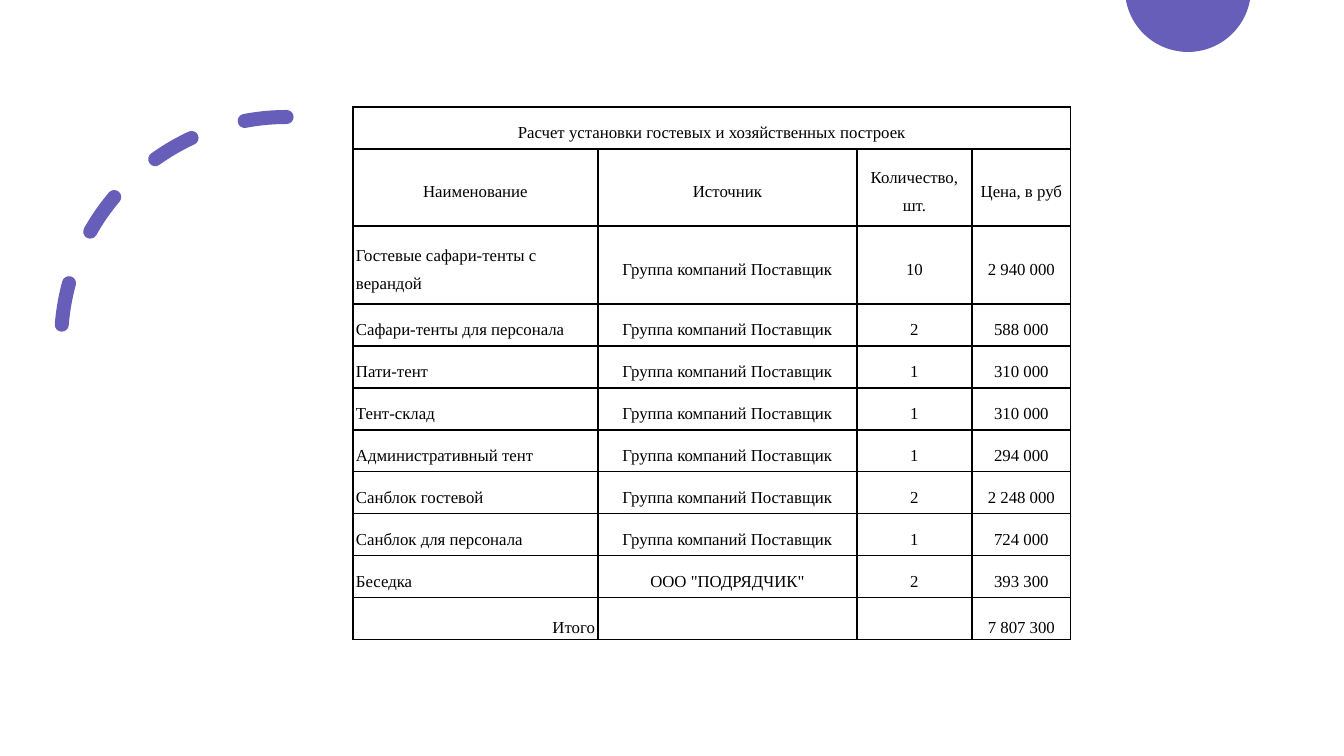
import math
from lxml import etree
from pptx import Presentation, util as u
from pptx.dml.color import RGBColor
from pptx.enum import dml, shapes, text
from pptx.oxml.ns import qn

SCALE = 914400 / 100.8
HUES = {"accent": "665EB8", "ink": "000000"}
LEFT, MID, RIGHT = text.PP_ALIGN.LEFT, text.PP_ALIGN.CENTER, text.PP_ALIGN.RIGHT
COLS = [245, 259, 115, 99]
ROWS = [42, 77, 78] + [42] * 8
TITLE = "Расчет установки гостевых и хозяйственных построек"
HEADS = ["Наименование", "Источник", "Количество, шт.", "Цена, в руб"]
CAMP = "Группа компаний Поставщик"
ITEMS = [
    ["Гостевые сафари-тенты с верандой", CAMP, "10", "2 940 000"],
    ["Сафари-тенты для персонала", CAMP, "2", "588 000"],
    ["Пати-тент", CAMP, "1", "310 000"],
    ["Тент-склад", CAMP, "1", "310 000"],
    ["Административный тент", CAMP, "1", "294 000"],
    ["Санблок гостевой", CAMP, "2", "2 248 000"],
    ["Санблок для персонала", CAMP, "1", "724 000"],
    ["Беседка", 'ООО "ПОДРЯДЧИК"', "2", "393 300"],
]
TOTAL = ["Итого", "", "", "7 807 300"]


def px(n):
    return u.Emu(round(n * SCALE))


def hue(name):
    return RGBColor.from_string(HUES[name])


def write(frame, words, size=12, font="Times New Roman", color="ink", align=MID, space=1.5):
    para = frame.paragraphs[0]
    para.alignment = align
    para.line_spacing = space
    para.font.size = u.Pt(size)
    if words:
        run = para.add_run()
        run.text = words
        run.font.size = u.Pt(size)
        run.font.name = font
        run.font.color.rgb = hue(color)


def edge(cell, color="ink", width=1):
    props = cell._tc.get_or_add_tcPr()
    for spot, side in enumerate(("lnL", "lnR", "lnT", "lnB")):
        line = etree.Element(qn(f"a:{side}"), w=str(u.Pt(width)))
        fill = etree.SubElement(line, qn("a:solidFill"))
        etree.SubElement(fill, qn("a:srgbClr"), val=HUES[color])
        props.insert(spot, line)


def add_disc(slide, x, y, radius):
    start = math.degrees(math.asin(-y / radius))
    steps = 80
    turns = [math.radians(start + (180 - 2 * start) * i / steps) for i in range(steps + 1)]
    dots = [(px(x + radius * math.cos(t)), px(y + radius * math.sin(t))) for t in turns]
    pen = slide.shapes.build_freeform(*dots[0])
    pen.add_line_segments(dots[1:], close=True)
    disc = pen.convert_to_shape()
    disc.shadow.inherit = False
    disc.fill.solid()
    disc.fill.fore_color.rgb = hue("accent")
    disc.line.fill.background()


def add_arc(slide, x, y, side):
    arc = slide.shapes.add_shape(shapes.MSO_SHAPE.ARC, px(x), px(y), px(side), px(side))
    arc.shadow.inherit = False
    arc.rotation = 180
    arc.fill.background()
    arc.line.color.rgb = hue("accent")
    arc.line.width = u.Pt(10)
    arc.line.dash_style = dml.MSO_LINE.DASH
    props = arc._element.spPr
    props.find(qn("a:xfrm")).set("flipV", "1")
    props.find(qn("a:ln")).set("cap", "rnd")


def add_grid(slide, x, y):
    data = [[TITLE, "", "", ""], HEADS, *ITEMS, TOTAL]
    frame = slide.shapes.add_table(len(ROWS), len(COLS), px(x), px(y), px(sum(COLS)), px(sum(ROWS)))
    grid = frame.table
    grid.first_row = grid.horz_banding = False
    for col, width in zip(grid.columns, COLS):
        col.width = px(width)
    for row, height in zip(grid.rows, ROWS):
        row.height = px(height)
    grid.cell(0, 0).merge(grid.cell(0, len(COLS) - 1))
    last = len(ROWS) - 1
    for r, line in enumerate(data):
        for c, words in enumerate(line):
            cell = grid.cell(r, c)
            cell.fill.background()
            cell.margin_left = cell.margin_right = px(3)
            cell.margin_top = cell.margin_bottom = px(3)
            cell.vertical_anchor = text.MSO_ANCHOR.BOTTOM if r == last else text.MSO_ANCHOR.MIDDLE
            edge(cell)
            align = MID
            if c == 0 and r > 1:
                align = RIGHT if r == last else LEFT
            write(cell.text_frame, words, align=align)


def main():
    deck = Presentation()
    deck.slide_width, deck.slide_height = px(1344), px(756)
    slide = deck.slides.add_slide(deck.slide_layouts[6])
    add_disc(slide, 1188, -11, 63)
    add_arc(slide, 61, 117, 451)
    add_grid(slide, 353, 107)
    deck.save("out.pptx")


if __name__ == "__main__":
    main()
